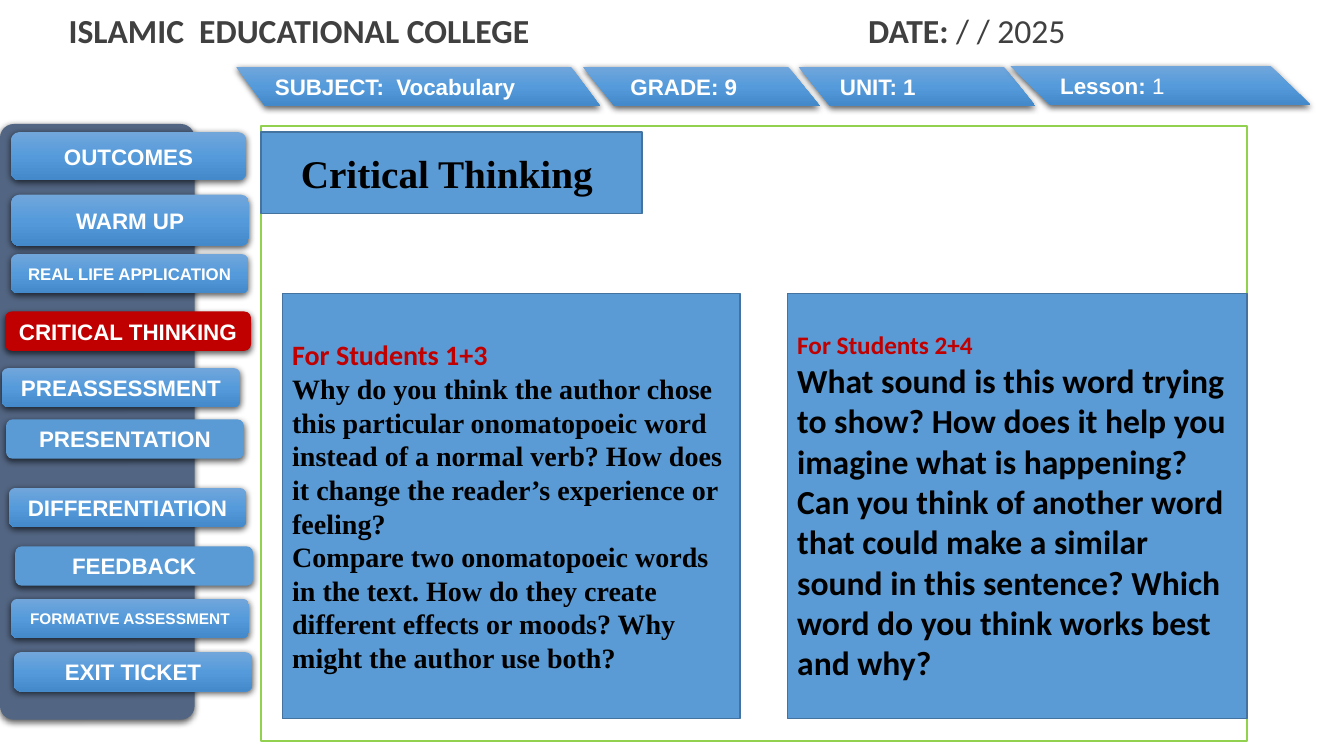
from copy import deepcopy

from lxml.etree import SubElement
from pptx import Presentation
from pptx.dml.color import RGBColor
from pptx.enum.shapes import MSO_SHAPE as Shape
from pptx.enum.text import MSO_ANCHOR as Anchor, MSO_AUTO_SIZE as AutoSize, PP_ALIGN as Align
from pptx.oxml.ns import qn
from pptx.util import Inches, Pt

WIDTH, HEIGHT = Inches(13.33), Inches(7.5)

WHITE = RGBColor(0xFF, 0xFF, 0xFF)
BLACK = RGBColor(0x00, 0x00, 0x00)
GREY = RGBColor(0x40, 0x40, 0x40)
SLATE = RGBColor(0x52, 0x65, 0x82)
BLUE = RGBColor(0x5B, 0x9B, 0xD5)
BLUE_EDGE = RGBColor(0x43, 0x73, 0x9E)
GREEN = RGBColor(0x92, 0xD0, 0x50)
RED = RGBColor(0xC0, 0x00, 0x00)
GLOSS = ((0, RGBColor(0x71, 0xA6, 0xDB)),
         (0.5, RGBColor(0x55, 0x9B, 0xDB)),
         (1, RGBColor(0x44, 0x8A, 0xCA)))

SANS, BODY, SERIF = "Arial", "Calibri", "Times New Roman"

# Label, left, top, width, height, text size, fill
MENU = (
    ("OUTCOMES", 0.83, 17.47, 17.48, 6.4, 16, GLOSS),
    ("WARM UP", 0.83, 25.73, 17.7, 6.8, 16, GLOSS),
    ("REAL LIFE APPLICATION", 0.83, 33.6, 17.63, 5.2, 12, GLOSS),
    ("CRITICAL THINKING", 0.38, 41.2, 18.3, 5.2, 16, RED),
    ("PREASSESSMENT", 0.15, 48.67, 17.7, 5.2, 16, GLOSS),
    ("PRESENTATION", 0.45, 55.47, 17.7, 5.2, 16, BLUE),
    ("DIFFERENTIATION", 0.68, 64.53, 17.63, 5.2, 16, GLOSS),
    ("FEEDBACK", 1.13, 72.27, 17.7, 5.2, 16, BLUE),
    ("FORMATIVE ASSESSMENT", 0.83, 79.2, 17.7, 5.2, 11, GLOSS),
    ("EXIT TICKET", 1.05, 86.27, 17.7, 5.2, 16, GLOSS),
)

# Bold text, plain text, left, top, width, slant; later bands lie on top
BANDS = (
    ("UNIT: 1", "", 59.4, 8.8, 17.63, 0.067),
    (" GRADE: 9", "", 43.35, 8.8, 17.63, 0.067),
    ("SUBJECT:  Vocabulary", "", 17.55, 8.8, 27.08, 0.04),
    ("Lesson: ", "1", 75.15, 8.67, 22.35, 0.067),
)

# Left, width, heading size, question size, question font, heading, questions
CARDS = (
    (21, 34.05, 20, 20, SERIF, "For Students 1+3", (
        "Why do you think the author chose this particular onomatopoeic word instead of "
        "a normal verb? How does it change the reader’s experience or feeling?",
        "Compare two onomatopoeic words in the text. How do they create different "
        "effects or moods? Why might the author use both?")),
    (58.58, 34.2, 18, 24, BODY, "For Students 2+4", (
        "What sound is this word trying to show? How does it help you imagine what is "
        "happening?",
        "Can you think of another word that could make a similar sound in this "
        "sentence? Which word do you think works best and why?")),
)


def area(left, top, width, height):
    """Turn percentages of the slide into a box of lengths."""
    return (int(WIDTH * left / 100), int(HEIGHT * top / 100),
            int(WIDTH * width / 100), int(HEIGHT * height / 100))


def style_run(run, size, font, color, bold=True):
    run.font.size, run.font.name, run.font.bold = Pt(size), font, bold
    run.font.color.rgb = color


def add_run(paragraph, text, *style):
    run = paragraph.add_run()
    run.text = text
    style_run(run, *style)


def paint(shape, fill):
    """Fill with one colour, or with the three-step gloss from top to bottom."""
    if fill is not GLOSS:
        shape.fill.solid()
        shape.fill.fore_color.rgb = fill
        return
    shape.fill.gradient()
    shape.fill.gradient_angle = 270
    stops = shape._element.spPr.find(".//" + qn("a:gsLst"))
    stops.insert(1, deepcopy(stops[0]))
    for stop, (position, color) in zip(shape.fill.gradient_stops, GLOSS):
        stop.position = position
        stop.color.rgb = color


def add_raised(slide, kind, box, fill):
    """Borderless shape with a soft shadow below it."""
    raised = slide.shapes.add_shape(kind, *area(*box))
    paint(raised, fill)
    raised.line.fill.background()
    raised.shadow.inherit = False
    effects = raised._element.spPr.find(qn("a:effectLst"))
    shade = SubElement(effects, qn("a:outerShdw"), blurRad=str(Pt(4.5)),
                       dist=str(Pt(1.5)), dir="5400000", algn="ctr", rotWithShape="0")
    tint = SubElement(shade, qn("a:srgbClr"), val="000000")
    SubElement(tint, qn("a:alpha"), val="63000")
    raised.text_frame.vertical_anchor = Anchor.MIDDLE
    return raised


def outline(shape, color):
    shape.line.color.rgb = color
    shape.line.width = Pt(1)


def add_menu_button(slide, label, left, top, width, height, size, fill):
    button = add_raised(slide, Shape.ROUNDED_RECTANGLE, (left, top, width, height), fill)
    paragraph = button.text_frame.paragraphs[0]
    paragraph.alignment = Align.CENTER
    add_run(paragraph, label, size, SANS, WHITE)


def add_band(slide, bold_text, plain_text, left, top, width, slant):
    band = add_raised(slide, Shape.DOUBLE_WAVE, (left, top, width, 5.2), GLOSS)
    band.adjustments[0], band.adjustments[1] = 0, slant
    paragraph = band.text_frame.paragraphs[0]
    paragraph.alignment = Align.LEFT
    add_run(paragraph, bold_text, 16, SANS, WHITE)
    if plain_text:
        add_run(paragraph, plain_text, 16, SANS, WHITE, False)


def add_header(slide):
    header = slide.shapes.add_textbox(*area(3.83, 0.67, 95.02, 6.93))
    header.text_frame.word_wrap = True
    header.text_frame.margin_left = Inches(0.17)
    paragraph = header.text_frame.paragraphs[0]
    tabs = SubElement(paragraph._p.get_or_add_pPr(), qn("a:tabLst"))
    SubElement(tabs, qn("a:tab"), pos=str(Inches(7.93)), algn="l")
    add_run(paragraph, "ISLAMIC  EDUCATIONAL COLLEGE\tDATE: ", 24, BODY, GREY)
    add_run(paragraph, "/ / 2025", 24, BODY, GREY, False)


def add_frame(slide):
    frame = slide.shapes.add_shape(Shape.RECTANGLE, *area(19.43, 16.67, 73.35, 81.33))
    frame.fill.background()
    outline(frame, GREEN)
    frame.shadow.inherit = False


def format_title(slide):
    title = slide.shapes.title
    title.left, title.top, title.width, title.height = area(19.43, 17.47, 28.35, 10.8)
    paint(title, BLUE)
    outline(title, BLUE_EDGE)
    title.text_frame.text = "Critical Thinking "
    title.text_frame.auto_size = AutoSize.NONE
    title.text_frame.vertical_anchor = Anchor.MIDDLE
    paragraph = title.text_frame.paragraphs[0]
    paragraph.alignment = Align.CENTER
    style_run(paragraph.runs[0], 28, SERIF, BLACK)
    slide.shapes._spTree.append(title._element)  # in front of the frame


def add_card(slide, left, width, heading_size, size, font, heading, questions):
    card = slide.shapes.add_shape(Shape.RECTANGLE, *area(left, 38.8, width, 56.27))
    paint(card, BLUE)
    outline(card, BLUE_EDGE)
    card.shadow.inherit = False
    text = card.text_frame
    text.word_wrap = True
    text.vertical_anchor = Anchor.MIDDLE
    add_run(text.paragraphs[0], heading, heading_size, BODY, RED)
    for question in questions:
        add_run(text.add_paragraph(), question, size, font, BLACK)
    for paragraph in text.paragraphs:
        paragraph.alignment = Align.LEFT


def main():
    deck = Presentation()
    deck.slide_width, deck.slide_height = WIDTH, HEIGHT
    slide = deck.slides.add_slide(deck.slide_layouts[5])

    # Side menu
    sidebar = add_raised(slide, Shape.ROUNDED_RECTANGLE, (0, 16.4, 14.48, 78.8), SLATE)
    sidebar.adjustments[0] = 0.071
    for entry in MENU:
        add_menu_button(slide, *entry)

    # Lesson details
    for band in BANDS:
        add_band(slide, *band)
    add_header(slide)

    # Task area
    add_frame(slide)
    format_title(slide)
    for card in CARDS:
        add_card(slide, *card)

    deck.save("out.pptx")


if __name__ == "__main__":
    main()
